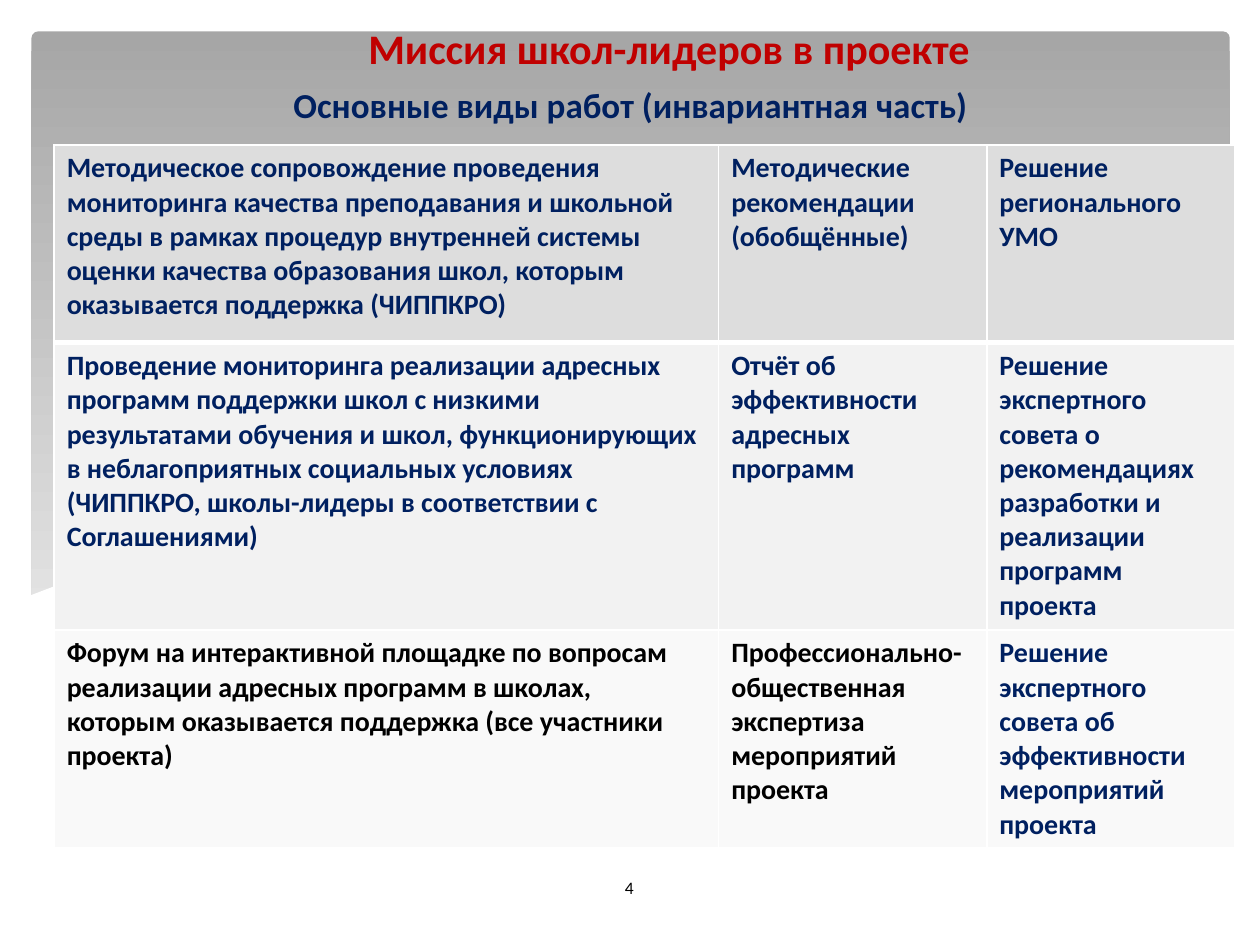
from dataclasses import dataclass

from lxml import etree
from pptx import Presentation
from pptx.dml.color import RGBColor
from pptx.enum.shapes import MSO_SHAPE
from pptx.enum.text import MSO_ANCHOR, PP_ALIGN
from pptx.oxml.ns import qn
from pptx.util import Inches, Pt

ROUND = MSO_SHAPE.ROUNDED_RECTANGLE
MIDDLE = MSO_ANCHOR.MIDDLE
CENTER = PP_ALIGN.CENTER
WIDE, HIGH = Inches(10), Inches(7.5)


@dataclass(frozen=True)
class Theme:
    """Colours and type sizes of the slide."""
    font: str = "Calibri"
    navy: str = "002060"
    red: str = "C00000"
    black: str = "000000"
    white: str = "FFFFFF"
    panel: tuple = ("A6A6A6", "EBEBEB")
    bands: tuple = ("DDDDDD", "F2F2F2", "F9F9F9")
    head: int = 24
    title: int = 20
    body: int = 16
    foot: int = 10


THEME = Theme()
COLS = (5.28, 2.13, 1.97)
ROWS = (1.57, 2.28, 1.73)
WAVE = ((0, 20), (2.4, 14), (7.6, 5), (14, 0), (23.8, 1.4), (33.2, 9.7),
        (44.4, 24.8), (58, 45.5), (70, 59), (82.4, 64.1), (91.8, 60),
        (100, 42.8), (100, 100), (0, 100))
TEXTS = (
    ("Методическое сопровождение проведения мониторинга качества преподавания "
     "и школьной среды в рамках процедур внутренней системы оценки качества "
     "образования школ, которым оказывается поддержка (ЧИППКРО)",
     "Методические рекомендации (обобщённые)",
     "Решение регионального УМО"),
    ("Проведение мониторинга реализации адресных программ поддержки школ "
     "с низкими результатами обучения и школ, функционирующих "
     "в неблагоприятных социальных условиях (ЧИППКРО, школы-лидеры "
     "в соответствии с Соглашениями)",
     "Отчёт об эффективности адресных программ",
     "Решение экспертного совета о рекомендациях разработки и реализации "
     "программ проекта"),
    ("Форум на интерактивной площадке по вопросам реализации адресных "
     "программ в школах, которым оказывается поддержка (все участники проекта)",
     "Профессионально-общественная экспертиза мероприятий проекта",
     "Решение экспертного совета об эффективности мероприятий проекта"),
)


def share(left, top, width, height):
    """Turn percent of the slide into a box."""
    return tuple(int(side * part / 100) for side, part in
                 zip((WIDE, HIGH, WIDE, HIGH), (left, top, width, height)))


def rgb(code):
    """Give the colour of a hex code."""
    return RGBColor.from_string(code)


def write(frame, text, size, color, bold=True, align=None):
    """Add one formatted run to the first paragraph of a frame."""
    frame.word_wrap = True
    para = frame.paragraphs[0]
    para.alignment = align
    run = para.add_run()
    run.text = text
    font = run.font
    font.name, font.size, font.bold = THEME.font, Pt(size), bold
    font.color.rgb = rgb(color)


def label(slide, box, text, size, color, bold=True):
    """Place a centred line of text in a box."""
    frame = slide.shapes.add_textbox(*box).text_frame
    frame.vertical_anchor = MIDDLE
    write(frame, text, size, color, bold, CENTER)


def panel(slide, box):
    """Draw the grey panel that fades downward."""
    shape = slide.shapes.add_shape(ROUND, *box)
    shape.adjustments[0] = 0.01
    shape.shadow.inherit = False
    shape.line.fill.background()
    shape.fill.gradient()
    shape.fill.gradient_angle = 270
    for stop, code in zip(shape.fill.gradient_stops, THEME.panel):
        stop.color.rgb = rgb(code)


def wave(slide, box):
    """Cover the foot of the panel with a white wave."""
    left, top, width, height = box
    spots = [(left + width * x / 100, top + height * y / 100) for x, y in WAVE]
    pen = slide.shapes.build_freeform(*spots[0])
    pen.add_line_segments(spots[1:], close=True)
    shape = pen.convert_to_shape()
    shape.shadow.inherit = False
    shape.line.fill.background()
    shape.fill.solid()
    shape.fill.fore_color.rgb = rgb(THEME.white)


def title(slide, box, text):
    """Place and format the title above the backdrop."""
    shape = slide.shapes.title
    slide.shapes.element.append(shape.element)
    shape.left, shape.top, shape.width, shape.height = box
    shape.text_frame.vertical_anchor = MIDDLE
    write(shape.text_frame, text, THEME.title, THEME.navy, align=CENTER)


def edge(cell, side, width):
    """Draw one white border of a cell."""
    props = cell._tc.get_or_add_tcPr()
    line = etree.SubElement(props, qn(f"a:ln{side}"), w=str(Pt(width)))
    fill = etree.SubElement(line, qn("a:solidFill"))
    etree.SubElement(fill, qn("a:srgbClr"), val=THEME.white)


def grid(slide, box):
    """Fill the table of works, results and decisions."""
    left, top, width, height = box
    table = slide.shapes.add_table(len(ROWS), len(COLS), *box).table
    for col, part in zip(table.columns, COLS):
        col.width = int(width * part / sum(COLS))
    for row, part in zip(table.rows, ROWS):
        row.height = int(height * part / sum(ROWS))
    for r, line in enumerate(TEXTS):
        for c, text in enumerate(line):
            cell = table.cell(r, c)
            for side in "LRTB":
                edge(cell, side, 3 if (r, side) in ((0, "B"), (1, "T")) else 1)
            cell.fill.solid()
            cell.fill.fore_color.rgb = rgb(THEME.bands[r])
            color = THEME.black if r == 2 and c < 2 else THEME.navy
            write(cell.text_frame, text, THEME.body, color)


def main():
    """Build the slide and save it."""
    deck = Presentation()
    deck.slide_width, deck.slide_height = WIDE, HIGH
    slide = deck.slides.add_slide(deck.slide_layouts[5])
    panel(slide, share(2.5, 3.33, 95.1, 69.07))
    wave(slide, share(2.3, 59.2, 95.4, 19.33))
    title(slide, share(2, 8, 96.1, 6.2),
          "Основные виды работ (инвариантная часть)")
    label(slide, share(9.8, 1.6, 86.6, 6.8),
          "Миссия школ-лидеров в проекте", THEME.head, THEME.red)
    label(slide, share(43.6, 91.2, 12.7, 5.33), "4",
          THEME.foot, THEME.black, False)
    grid(slide, share(4.3, 15.33, 93.7, 74.4))
    deck.save("out.pptx")


if __name__ == "__main__":
    main()
